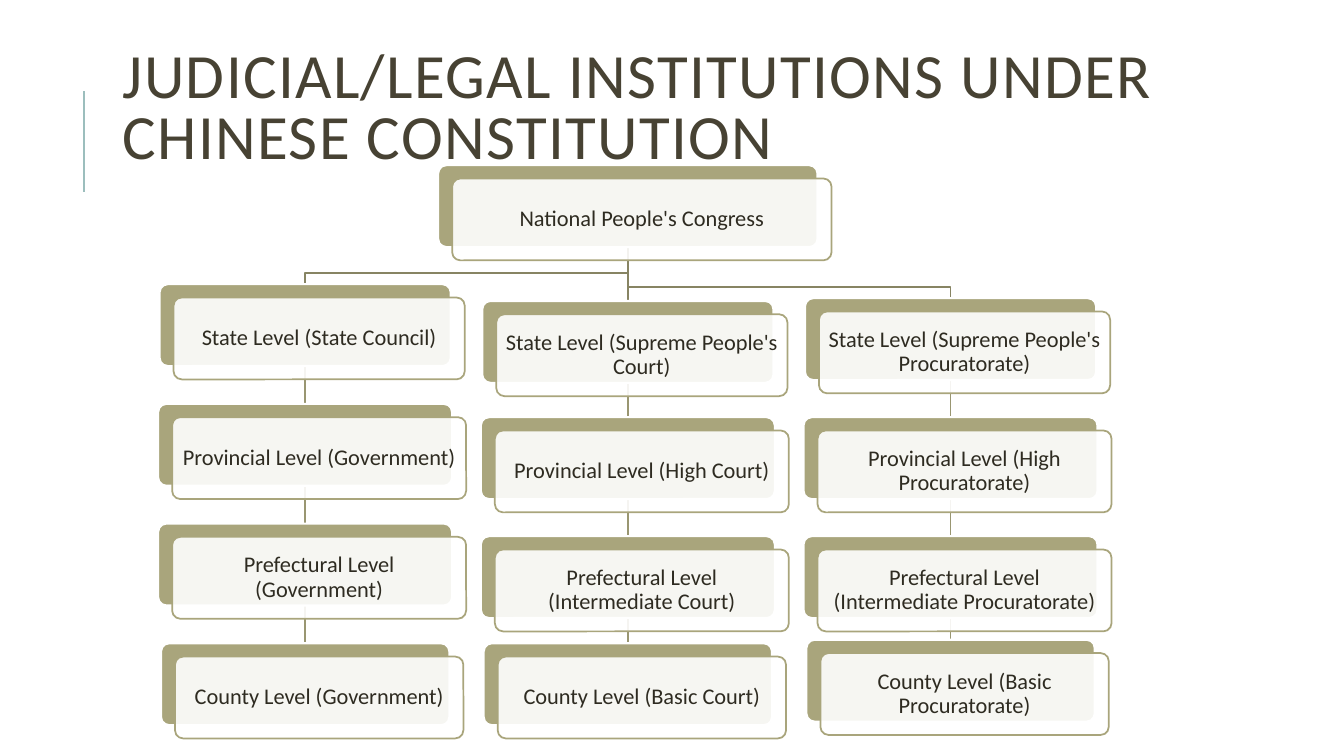
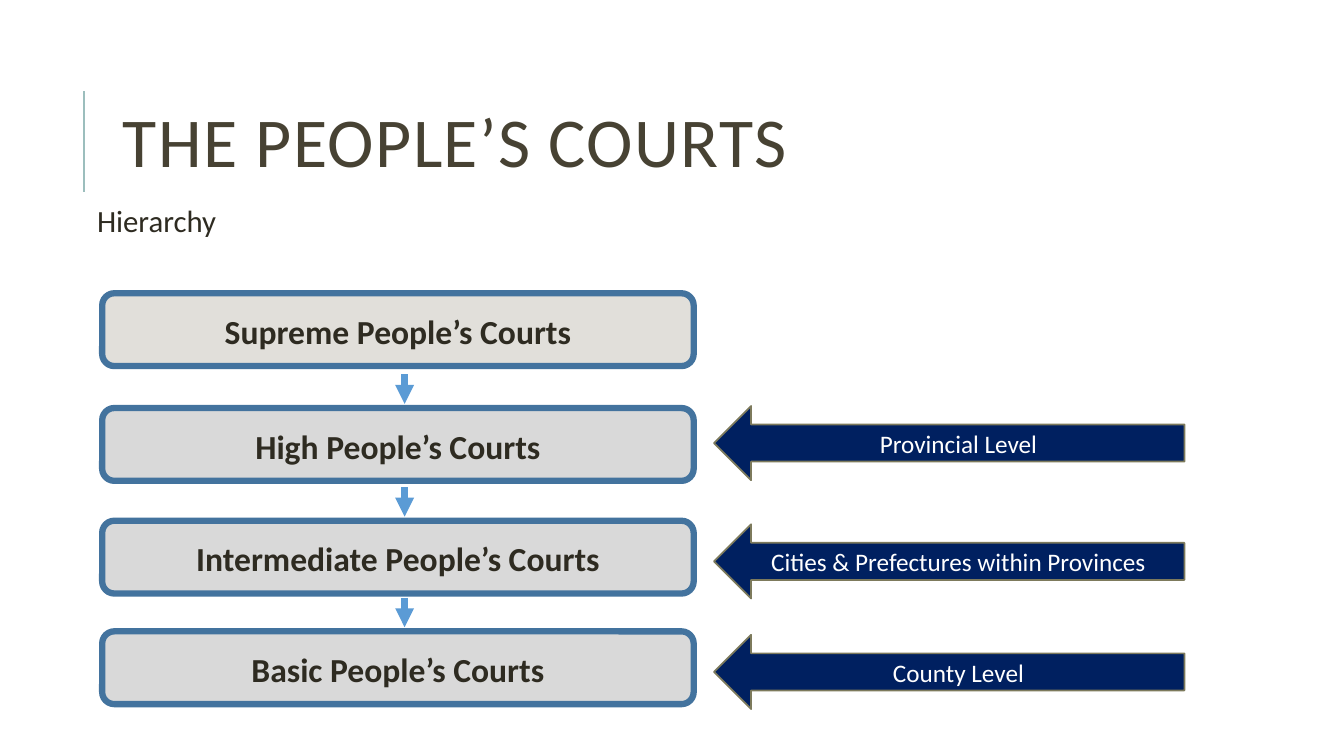
import dataclasses

import lxml.etree
import pptx
import pptx.dml.color
import pptx.enum.shapes
import pptx.enum.text
import pptx.oxml.ns
import pptx.util

Pt = pptx.util.Pt
SHAPES = pptx.enum.shapes.MSO_SHAPE
CENTER = pptx.enum.text.PP_ALIGN.CENTER
LEFT = pptx.enum.text.PP_ALIGN.LEFT
MIDDLE = pptx.enum.text.MSO_ANCHOR.MIDDLE
qn = pptx.oxml.ns.qn


@dataclasses.dataclass(frozen=True)
class Theme:
    font: str = "Calibri"
    title: str = "474233"
    text: str = "2E2B21"
    white: str = "FFFFFF"
    accent: str = "9CBEBD"
    card: str = "A9A57C"
    branch: str = "878463"
    link: str = "999671"
    bar: str = "D9D9D9"
    top_bar: str = "E1DFDA"
    bar_edge: str = "43739E"
    step: str = "5B9BD5"
    label: str = "002060"
    label_edge: str = "7D7A5C"
    card_size: int = 16
    label_size: int = 18
    body_size: int = 22
    bar_size: int = 24


THEME = Theme()

# Organisation chart: measures, then one column of offices per branch
CARD_HEIGHT = 58.5
CARD_SHIFT = (10, 9.5)
CARD_WIDTHS = (208, 210, 210, 206)
ROOT_TOP, ROOT_WIDTH = 118, 271
MIDDLE_COLUMN, COLUMN_STEP = 448.5, 230.5
BEND_GAP = 8
BRANCHES = (
    ((203, "State Level (State Council)"),
     (288.5, "Provincial Level (Government)"),
     (374, "Prefectural Level (Government)"),
     (459.5, "County Level (Government)")),
    ((215, "State Level (Supreme People's Court)"),
     (298, "Provincial Level (High Court)"),
     (383, "Prefectural Level (Intermediate Court)"),
     (459.5, "County Level (Basic Court)")),
    ((213, "State Level (Supreme People's Procuratorate)"),
     (298, "Provincial Level (High Procuratorate)"),
     (383, "Prefectural Level (Intermediate Procuratorate)"),
     (457, "County Level (Basic Procuratorate)")),
)

# Court hierarchy: bar top, court, label top, label
COURTS = (
    (209.5, "Supreme People’s Courts", None, None),
    (291.5, "High People’s Courts", 290, "Provincial Level"),
    (372, "Intermediate People’s Courts", 374.5,
     "Cities & Prefectures within Provinces"),
    (451, "Basic People’s Courts", 453.5, "County Level"),
)


def rgb(value):
    return pptx.dml.color.RGBColor.from_string(value)


def set_text(shape, text, size, color, bold=False, spacing=1.0,
             align=CENTER, inset=7.2):
    frame = shape.text_frame
    frame.word_wrap = True
    frame.auto_size = pptx.enum.text.MSO_AUTO_SIZE.NONE
    frame.vertical_anchor = MIDDLE
    frame.margin_left = frame.margin_right = Pt(inset)
    frame.margin_top = frame.margin_bottom = Pt(3.6)
    frame.text = text
    paragraph = frame.paragraphs[0]
    paragraph.alignment = align
    paragraph.line_spacing = spacing
    font = paragraph.font
    font.name, font.size, font.bold = THEME.font, Pt(size), bold
    font.color.rgb = rgb(color)
    return paragraph


def add_box(slide, kind, left, top, width, height, fill, edge, edge_width):
    shape = slide.shapes.add_shape(
        kind, Pt(left), Pt(top), Pt(width), Pt(height))
    shape.shadow.inherit = False
    shape.fill.solid()
    shape.fill.fore_color.rgb = rgb(fill)
    shape.line.color.rgb = rgb(edge)
    shape.line.width = Pt(edge_width)
    return shape


def add_line(slide, start, end, color, width, arrow=False):
    line = slide.shapes.add_connector(
        pptx.enum.shapes.MSO_CONNECTOR.STRAIGHT,
        Pt(start[0]), Pt(start[1]), Pt(end[0]), Pt(end[1]))
    line.line.color.rgb = rgb(color)
    line.line.width = Pt(width)
    properties = line._element.spPr
    if arrow:
        lxml.etree.SubElement(
            properties.find(qn("a:ln")), qn("a:tailEnd"), type="triangle")
    lxml.etree.SubElement(properties, qn("a:effectLst"))


def add_elbow(slide, start, end):
    bend = end[1] - BEND_GAP
    builder = slide.shapes.build_freeform(Pt(start[0]), Pt(start[1]))
    corners = ((start[0], bend), (end[0], bend), end)
    builder.add_line_segments([(Pt(x), Pt(y)) for x, y in corners],
                              close=False)
    elbow = builder.convert_to_shape()
    elbow.shadow.inherit = False
    elbow.fill.background()
    elbow.line.color.rgb = rgb(THEME.branch)
    elbow.line.width = Pt(1.25)


def add_titled_slide(presentation, text, size, top):
    slide = presentation.slides.add_slide(presentation.slide_layouts[5])
    add_line(slide, (60, 137), (60, 65), THEME.accent, 1.5)
    title = slide.shapes.title
    title.left, title.top = Pt(80.5), Pt(top)
    title.width, title.height = Pt(765.5), Pt(118)
    paragraph = set_text(title, text, size, THEME.title,
                         spacing=0.8, align=LEFT)
    paragraph._p.pPr.find(qn("a:defRPr")).set("spc", "100")
    return slide


def add_card(slide, center, top, width, text):
    left = center - width / 2
    back = add_box(slide, SHAPES.ROUNDED_RECTANGLE, left, top, width,
                   CARD_HEIGHT, THEME.card, THEME.white, 1.5)
    front = add_box(slide, SHAPES.ROUNDED_RECTANGLE, left + CARD_SHIFT[0],
                    top + CARD_SHIFT[1], width, CARD_HEIGHT,
                    THEME.white, THEME.card, 1.25)
    back.adjustments[0] = front.adjustments[0] = 0.1
    color = front._element.spPr.find(qn("a:solidFill")).find(qn("a:srgbClr"))
    lxml.etree.SubElement(color, qn("a:alpha"), val="90000")
    set_text(front, text, THEME.card_size, THEME.text,
             spacing=0.9, inset=5)


def build_institutions(presentation):
    slide = add_titled_slide(
        presentation,
        "JUDICIAL/LEGAL INSTITUTIONS UNDER CHINESE CONSTITUTION", 45, 20)
    columns = [(MIDDLE_COLUMN + (index - 1) * COLUMN_STEP, offices)
               for index, offices in enumerate(BRANCHES)]
    root_end = (MIDDLE_COLUMN, ROOT_TOP + CARD_HEIGHT)

    # Lines lie behind the cards
    for center, offices in columns:
        first = (center, offices[0][0])
        if center == MIDDLE_COLUMN:
            add_line(slide, root_end, first, THEME.branch, 1.25)
        else:
            add_elbow(slide, root_end, first)
        for (upper, _), (lower, _) in zip(offices, offices[1:]):
            add_line(slide, (center, upper + CARD_HEIGHT), (center, lower),
                     THEME.link, 1.25)

    # Cards
    add_card(slide, MIDDLE_COLUMN, ROOT_TOP, ROOT_WIDTH,
             "National People's Congress")
    for center, offices in columns:
        for (top, office), width in zip(offices, CARD_WIDTHS):
            add_card(slide, center, top, width, office)


def build_courts(presentation):
    slide = add_titled_slide(presentation, "THE PEOPLE’S COURTS", 50, 46)
    heading = slide.shapes.add_textbox(Pt(58.5), Pt(143), Pt(765.5), Pt(32))
    set_text(heading, "Hierarchy", THEME.body_size, THEME.text,
             spacing=0.9, align=LEFT, inset=10.8)

    for index, (top, court, label_top, label) in enumerate(COURTS):
        bar = add_box(slide, SHAPES.ROUNDED_RECTANGLE, 73, top, 422.5, 52,
                      THEME.bar if index else THEME.top_bar,
                      THEME.bar_edge, 4.5)
        set_text(bar, court, THEME.bar_size, THEME.text,
                 bold=True, spacing=1.07)
        if label:
            add_line(slide, (289, top - 24), (289, top - 3),
                     THEME.step, 4.5, arrow=True)
            arrow = add_box(slide, SHAPES.LEFT_ARROW, 510, label_top, 336, 53,
                            THEME.label, THEME.label_edge, 1.25)
            set_text(arrow, label, THEME.label_size, THEME.white)


def main():
    presentation = pptx.Presentation()
    presentation.slide_width, presentation.slide_height = Pt(960), Pt(540)
    build_institutions(presentation)
    build_courts(presentation)
    presentation.save("out.pptx")


if __name__ == "__main__":
    main()
